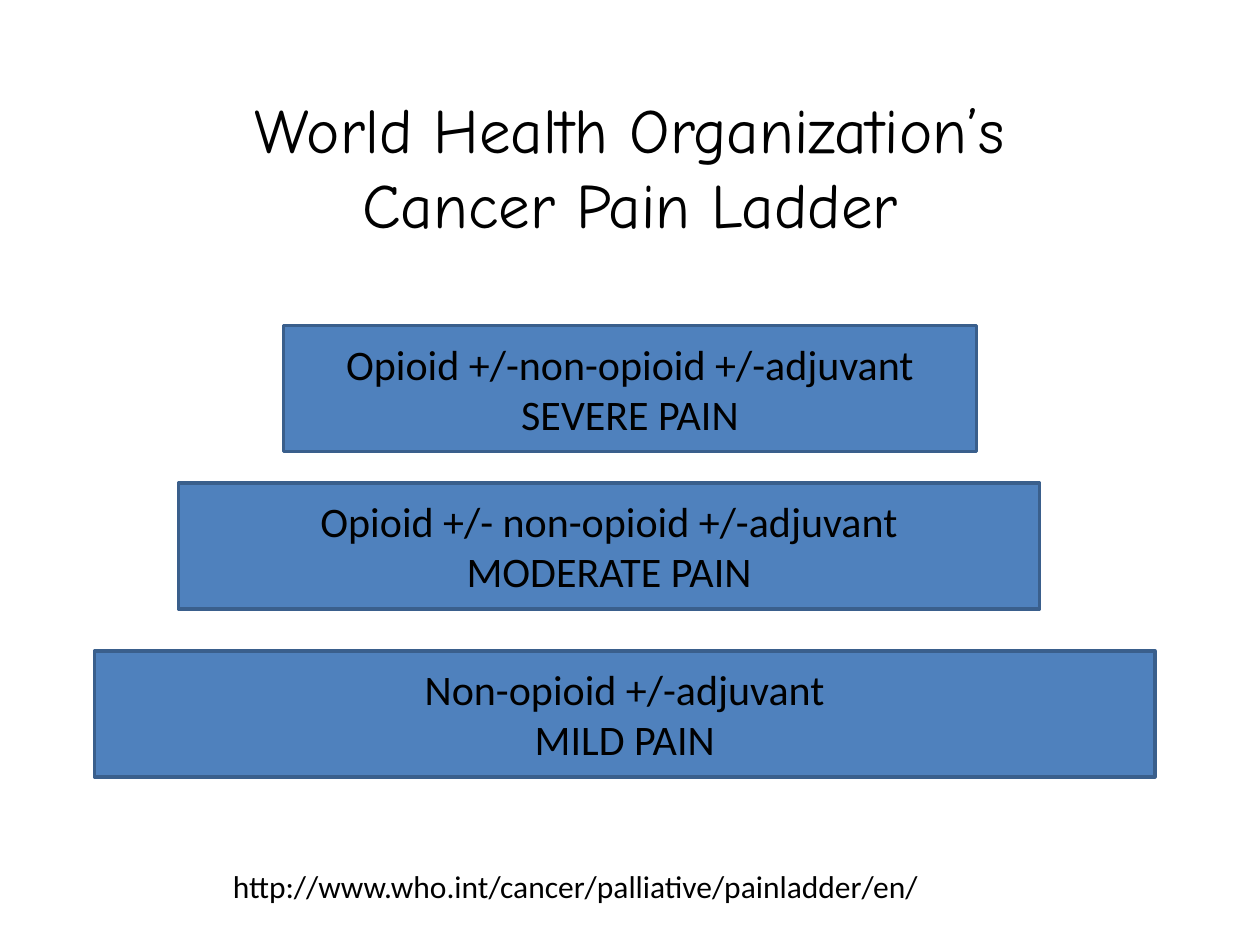
import pptx
import pptx.util
import pptx.dml.color
import pptx.enum.shapes
import pptx.enum.text

Pt = pptx.util.Pt
BLUE = pptx.dml.color.RGBColor(0x4F, 0x81, 0xBD)
EDGE = pptx.dml.color.RGBColor(0x3A, 0x5F, 0x8C)
BLACK = pptx.dml.color.RGBColor(0, 0, 0)
ALIGN = pptx.enum.text.PP_ALIGN
ANCHOR = pptx.enum.text.MSO_ANCHOR


def write(shape, text, size=24, font="Calibri", align=ALIGN.CENTER,
          anchor=ANCHOR.MIDDLE):
    frame = shape.text_frame
    frame.word_wrap = True
    frame.vertical_anchor = anchor
    frame.text = text
    for para in frame.paragraphs:
        para.alignment = align
        para.font.size = Pt(size)
        para.font.name = font
        para.font.color.rgb = BLACK


deck = pptx.Presentation()
deck.slide_width, deck.slide_height = Pt(720), Pt(540)
slide = deck.slides.add_slide(deck.slide_layouts[6])
shapes = slide.shapes

# Web address
link = shapes.add_textbox(Pt(126), Pt(492), Pt(438), Pt(29))
write(link, "http://www.who.int/cancer/palliative/painladder/en/",
      size=18, align=ALIGN.LEFT, anchor=ANCHOR.TOP)

# Ladder steps, from the bottom up: left, top, width, text
steps = [
    (54, 372, 606, "Non-opioid +/-adjuvant\nMILD PAIN"),
    (102, 276, 492, "Opioid +/- non-opioid +/-adjuvant\nMODERATE PAIN"),
    (162, 186, 396, "Opioid +/-non-opioid +/-adjuvant\nSEVERE PAIN"),
]
for left, top, width, text in steps:
    step = shapes.add_shape(pptx.enum.shapes.MSO_SHAPE.RECTANGLE,
                            Pt(left), Pt(top), Pt(width), Pt(72))
    step.shadow.inherit = False
    step.fill.solid()
    step.fill.fore_color.rgb = BLUE
    step.line.color.rgb = EDGE
    step.line.width = Pt(2)
    write(step, text)

# Title
title = shapes.add_textbox(Pt(84), Pt(48), Pt(552), Pt(94.5))
write(title, "World Health Organization’s Cancer Pain Ladder",
      size=36, font="Comic Neue", anchor=ANCHOR.TOP)

deck.save("out.pptx")
